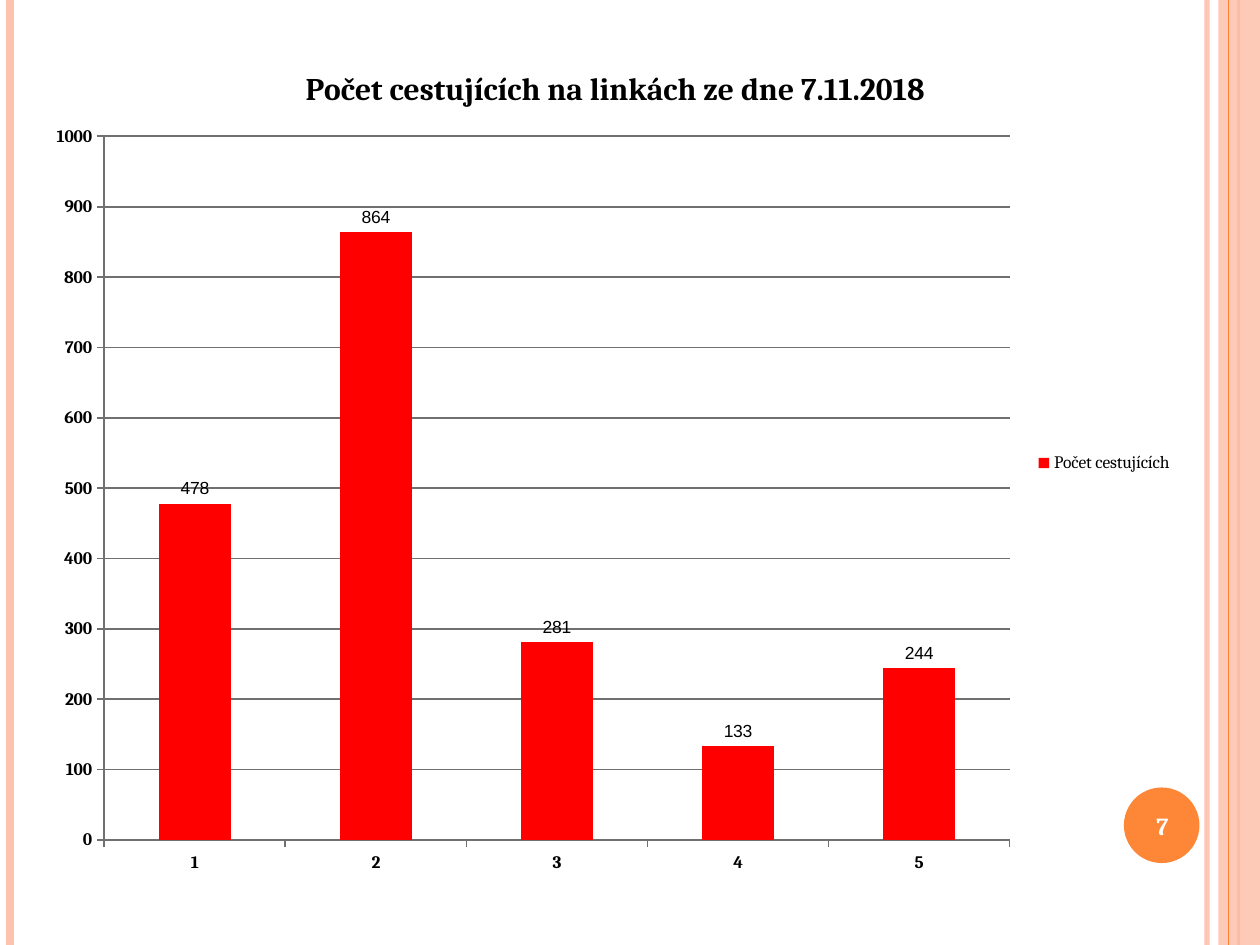
from dataclasses import dataclass

from lxml.etree import SubElement
from pptx import Presentation
from pptx.chart.data import CategoryChartData
from pptx.dml.color import RGBColor
from pptx.enum.chart import (XL_CHART_TYPE, XL_LABEL_POSITION,
                             XL_LEGEND_POSITION, XL_TICK_MARK)
from pptx.enum.shapes import MSO_CONNECTOR, MSO_SHAPE
from pptx.enum.text import MSO_ANCHOR, PP_ALIGN
from pptx.oxml.ns import qn
from pptx.util import Inches, Pt


@dataclass(frozen=True)
class Theme:
    """Colours, fonts and type sizes of the slide."""
    pale: str = "FEC3AE"
    orange: str = "FE8637"
    red: str = "FF0000"
    grid: str = "707070"
    black: str = "000000"
    white: str = "FFFFFF"
    font: str = "Cambria"
    sans: str = "Arial"
    small: int = 10
    page: int = 14
    title: int = 18


THEME = Theme()


def rgb(code):
    """Turn a hex code into a colour."""
    return RGBColor.from_string(code)


def style(font, size=THEME.small, name=THEME.font, color=THEME.black, bold=False):
    """Set the main traits of a font."""
    font.size, font.name, font.bold = Pt(size), name, bold
    font.color.rgb = rgb(color)


def write(frame, text, align=PP_ALIGN.CENTER, **traits):
    """Put one formatted run of text into a text frame."""
    para = frame.paragraphs[0]
    para.alignment = align
    run = para.add_run()
    run.text = text
    style(run.font, **traits)


def fade(shape, alpha):
    """Give the first colour of a shape an opacity in percent."""
    color = shape.element.spPr.find(".//" + qn("a:srgbClr"))
    SubElement(color, qn("a:alpha")).set("val", str(alpha * 1000))


def stripe(slide, left, width, color, alpha=100):
    """Draw a vertical line over the full height."""
    x = Inches(left)
    line = slide.shapes.add_connector(MSO_CONNECTOR.STRAIGHT, x, 0, x, Inches(7.5))
    line.line.width = Pt(width)
    line.line.color.rgb = rgb(color)
    if alpha < 100:
        fade(line, alpha)
    SubElement(line.element.spPr, qn("a:effectLst"))


def block(slide, kind, box, color, alpha=100):
    """Draw a filled shape without outline."""
    shape = slide.shapes.add_shape(kind, *map(Inches, box))
    shape.shadow.inherit = False
    shape.fill.solid()
    shape.fill.fore_color.rgb = rgb(color)
    shape.line.fill.background()
    if alpha < 100:
        fade(shape, alpha)


def label(slide, box, text, **traits):
    """Add a text box centred on its middle."""
    frame = slide.shapes.add_textbox(*map(Inches, box)).text_frame
    frame.word_wrap = True
    frame.vertical_anchor = MSO_ANCHOR.MIDDLE
    write(frame, text, **traits)


def place(part, index, **spots):
    """Fix the layout of a chart part in fractions of the chart."""
    layout = part.find(qn("c:layout"))
    if layout is not None:
        part.remove(layout)
    layout = part.makeelement(qn("c:layout"))
    part.insert(index, layout)
    manual = SubElement(layout, qn("c:manualLayout"))
    if "w" in spots:
        SubElement(manual, qn("c:layoutTarget")).set("val", "inner")
    for key in ("xMode", "yMode"):
        SubElement(manual, qn("c:" + key)).set("val", "edge")
    for key, value in spots.items():
        SubElement(manual, qn("c:" + key)).set("val", str(value))


def rule(line):
    """Format an axis or grid line."""
    line.width = Pt(1)
    line.color.rgb = rgb(THEME.grid)


def columns(slide, box, title, name, values):
    """Add the column chart."""
    data = CategoryChartData()
    data.categories = [str(n + 1) for n in range(len(values))]
    data.add_series(name, values)
    chart = slide.shapes.add_chart(
        XL_CHART_TYPE.COLUMN_CLUSTERED, *map(Inches, box), data).chart
    style(chart.font)

    chart.has_title = True
    head = chart.chart_title
    write(head.text_frame, title, size=THEME.title, bold=True)
    place(head.element, 1, x=0.23, y=0.03)
    place(chart.element.find(".//" + qn("c:plotArea")), 0,
          x=0.06, y=0.117, w=0.787, h=0.825)

    chart.has_legend = True
    chart.legend.position = XL_LEGEND_POSITION.RIGHT
    chart.legend.include_in_layout = False
    style(chart.legend.font)

    for axis in (chart.category_axis, chart.value_axis):
        axis.major_tick_mark = XL_TICK_MARK.OUTSIDE
        style(axis.tick_labels.font, bold=True)
        rule(axis.format.line)
    scale = chart.value_axis
    scale.minimum_scale, scale.maximum_scale, scale.major_unit = 0, 1000, 100
    rule(scale.major_gridlines.format.line)

    plot = chart.plots[0]
    plot.gap_width = 150
    plot.vary_by_categories = False
    fill = plot.series[0].format.fill
    fill.solid()
    fill.fore_color.rgb = rgb(THEME.red)
    plot.has_data_labels = True
    marks = plot.data_labels
    marks.show_value = True
    marks.position = XL_LABEL_POSITION.OUTSIDE_END
    style(marks.font, name=THEME.sans)


def main():
    """Build and save the slide."""
    deck = Presentation()
    deck.slide_width, deck.slide_height = Inches(10), Inches(7.5)
    slide = deck.slides.add_slide(deck.slide_layouts[6])
    stripe(slide, 9.58, 3, THEME.pale, 93)
    stripe(slide, 0.08, 4.5, THEME.pale)
    stripe(slide, 9.83, 1.5, THEME.orange)
    block(slide, MSO_SHAPE.RECTANGLE, (9.67, 0, 0.33, 7.5), THEME.pale, 87)
    stripe(slide, 9.75, 0.75, THEME.orange)
    block(slide, MSO_SHAPE.OVAL, (8.92, 6.25, 0.6, 0.6), THEME.orange)
    label(slide, (8.89, 6.27, 0.67, 0.57), "7",
          size=THEME.page, color=THEME.white, bold=True)
    columns(slide, (0.28, 0.29, 9.13, 6.77),
            "Počet cestujících na linkách ze dne 7.11.2018",
            "Počet cestujících", (478, 864, 281, 133, 244))
    deck.save("out.pptx")


if __name__ == "__main__":
    main()
